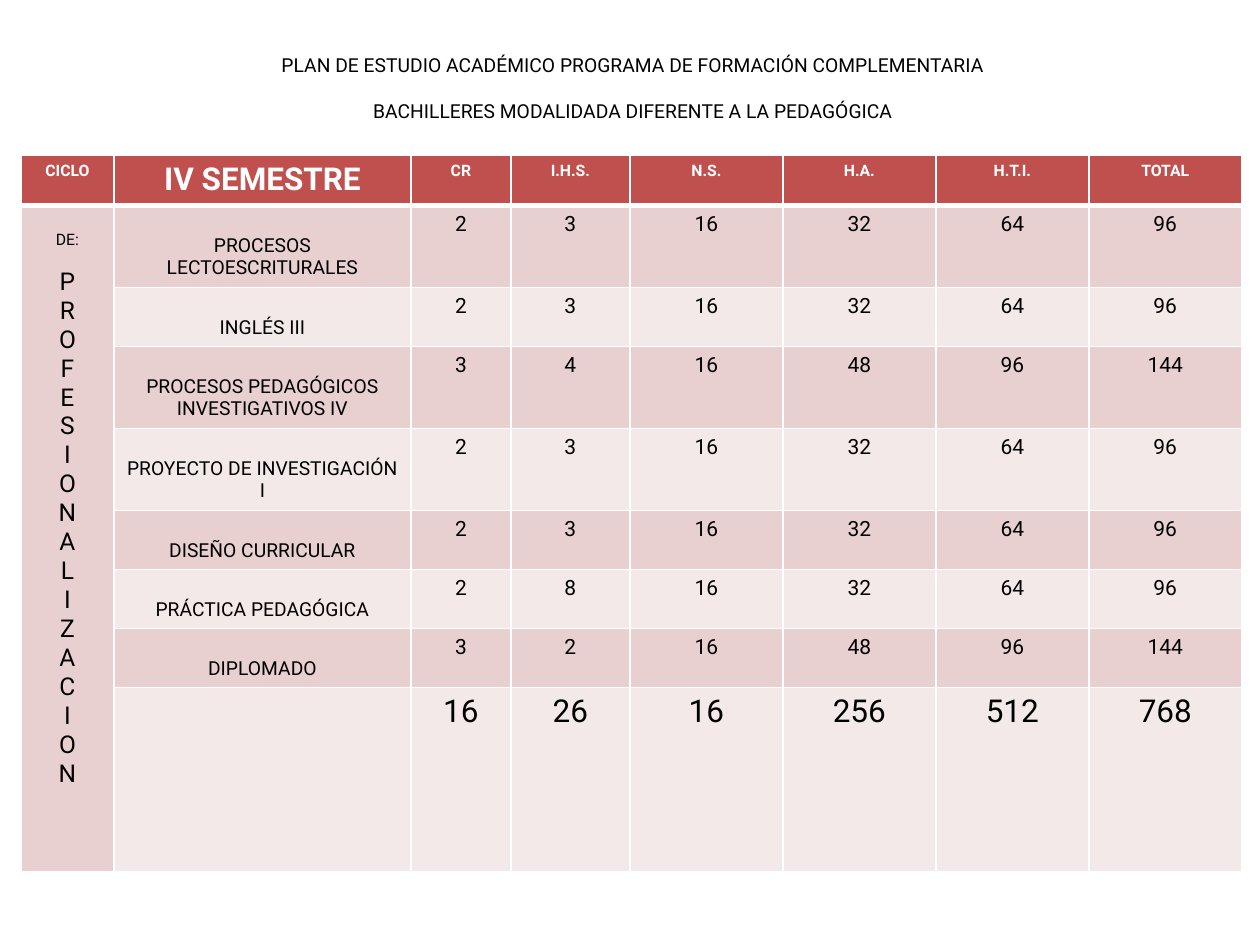
from lxml.etree import SubElement
from pptx import Presentation
from pptx.dml.color import RGBColor
from pptx.enum.text import MSO_ANCHOR, MSO_AUTO_SIZE, PP_ALIGN
from pptx.oxml.ns import qn
from pptx.util import Emu, Pt

EMU_PER_PX = 914400 / 126
FONT = "Roboto"
WHITE, BLACK = "FFFFFF", "000000"
HEADER_FILL, DARK_BAND, LIGHT_BAND = "C0504D", "E8D0D0", "F4E9E9"

TITLE_LINES = [
    "PLAN DE ESTUDIO ACADÉMICO PROGRAMA DE FORMACIÓN COMPLEMENTARIA",
    "BACHILLERES MODALIDADA DIFERENTE A LA PEDAGÓGICA",
]
HEADERS = ["CICLO", "IV SEMESTRE", "CR", "I.H.S.", "N.S.", "H.A.", "H.T.I.", "TOTAL"]
COURSES = [
    ("PROCESOS LECTOESCRITURALES", 2, 3, 16, 32, 64, 96),
    ("INGLÉS III", 2, 3, 16, 32, 64, 96),
    ("PROCESOS PEDAGÓGICOS INVESTIGATIVOS IV", 3, 4, 16, 48, 96, 144),
    ("PROYECTO DE INVESTIGACIÓN I", 2, 3, 16, 32, 64, 96),
    ("DISEÑO CURRICULAR", 2, 3, 16, 32, 64, 96),
    ("PRÁCTICA PEDAGÓGICA", 2, 8, 16, 32, 64, 96),
    ("DIPLOMADO", 3, 2, 16, 48, 96, 144),
]
TOTALS = ("", 16, 26, 16, 256, 512, 768)
COLUMN_WIDTHS = [93, 297, 100, 119] + [153] * 4
ROW_HEIGHTS = [49, 82, 59, 82, 82, 59, 59, 59, 184]


def px(length):
    return Emu(round(length * EMU_PER_PX))


def color(hex_string):
    return RGBColor.from_string(hex_string)


def add_text(paragraph, text, size=12, text_color=BLACK, bold=False, space_before=0):
    paragraph.alignment = PP_ALIGN.CENTER
    paragraph.space_before = Pt(space_before)
    run = paragraph.add_run()
    run.text = text
    run.font.name = FONT
    run.font.size = Pt(size)
    run.font.bold = bold
    run.font.color.rgb = color(text_color)


def add_title(slide):
    title = slide.shapes.title
    title.left, title.top, title.width, title.height = px(246), px(47), px(774), px(83)
    frame = title.text_frame
    frame.word_wrap = True
    frame.auto_size = MSO_AUTO_SIZE.SHAPE_TO_FIT_TEXT
    frame.vertical_anchor = MSO_ANCHOR.TOP
    add_text(frame.paragraphs[0], TITLE_LINES[0], size=11)
    add_text(frame.add_paragraph(), TITLE_LINES[1], size=11, space_before=13)


def set_border(cell, side, width):
    properties = cell._tc.get_or_add_tcPr()
    line = SubElement(properties, qn(f"a:ln{side}"), w=str(Pt(width)))
    fill = SubElement(line, qn("a:solidFill"))
    SubElement(fill, qn("a:srgbClr"), val=WHITE)


def style_cell(cell, row):
    top = 3 if row == 1 else 1
    bottom = 3 if row == 0 else 1
    for side, width in (("L", 1), ("R", 1), ("T", top), ("B", bottom)):
        set_border(cell, side, width)
    cell.fill.solid()
    band = DARK_BAND if row % 2 else LIGHT_BAND
    cell.fill.fore_color.rgb = color(band if row else HEADER_FILL)


def fill_row(table, row, values, name_size, value_size):
    """Write the subject name and its figures, from the second column on."""
    for column, value in enumerate(values, start=1):
        if value != "":
            size = name_size if column == 1 else value_size
            add_text(table.cell(row, column).text_frame.paragraphs[0], str(value), size=size)


def fill_cycle_cell(table):
    """Stack the name of the cycle, one letter a line."""
    cell = table.cell(1, 0)
    cell.merge(table.cell(len(ROW_HEIGHTS) - 1, 0))
    cell.margin_top = px(25)
    frame = cell.text_frame
    add_text(frame.paragraphs[0], "DE:", size=9)
    for index, letter in enumerate("PROFESIONALIZACION"):
        add_text(frame.add_paragraph(), letter, size=14, space_before=0 if index else 10.5)


def add_study_plan(slide):
    table = slide.shapes.add_table(
        len(ROW_HEIGHTS), len(COLUMN_WIDTHS),
        px(21), px(155), px(sum(COLUMN_WIDTHS)), px(sum(ROW_HEIGHTS)),
    ).table
    for column, width in zip(table.columns, COLUMN_WIDTHS):
        column.width = px(width)
    for row, height in zip(table.rows, ROW_HEIGHTS):
        row.height = px(height)
    for index, row in enumerate(table.rows):
        for cell in row.cells:
            style_cell(cell, index)

    # Header
    for column, text in enumerate(HEADERS):
        add_text(table.cell(0, column).text_frame.paragraphs[0], text,
                 size=18 if column == 1 else 9, text_color=WHITE, bold=True)

    # Subjects, with the name one line below the figures
    for row, course in enumerate(COURSES, start=1):
        fill_row(table, row, course, name_size=11, value_size=12)
        table.cell(row, 1).margin_top = px(29)

    # Totals and cycle
    fill_row(table, len(COURSES) + 1, TOTALS, name_size=11, value_size=18)
    fill_cycle_cell(table)


def main():
    presentation = Presentation()
    presentation.slide_width, presentation.slide_height = px(1260), px(945)
    slide = presentation.slides.add_slide(presentation.slide_layouts[5])
    slide.background.fill.solid()
    slide.background.fill.fore_color.rgb = color(WHITE)
    add_title(slide)
    add_study_plan(slide)
    presentation.save("out.pptx")


if __name__ == "__main__":
    main()
